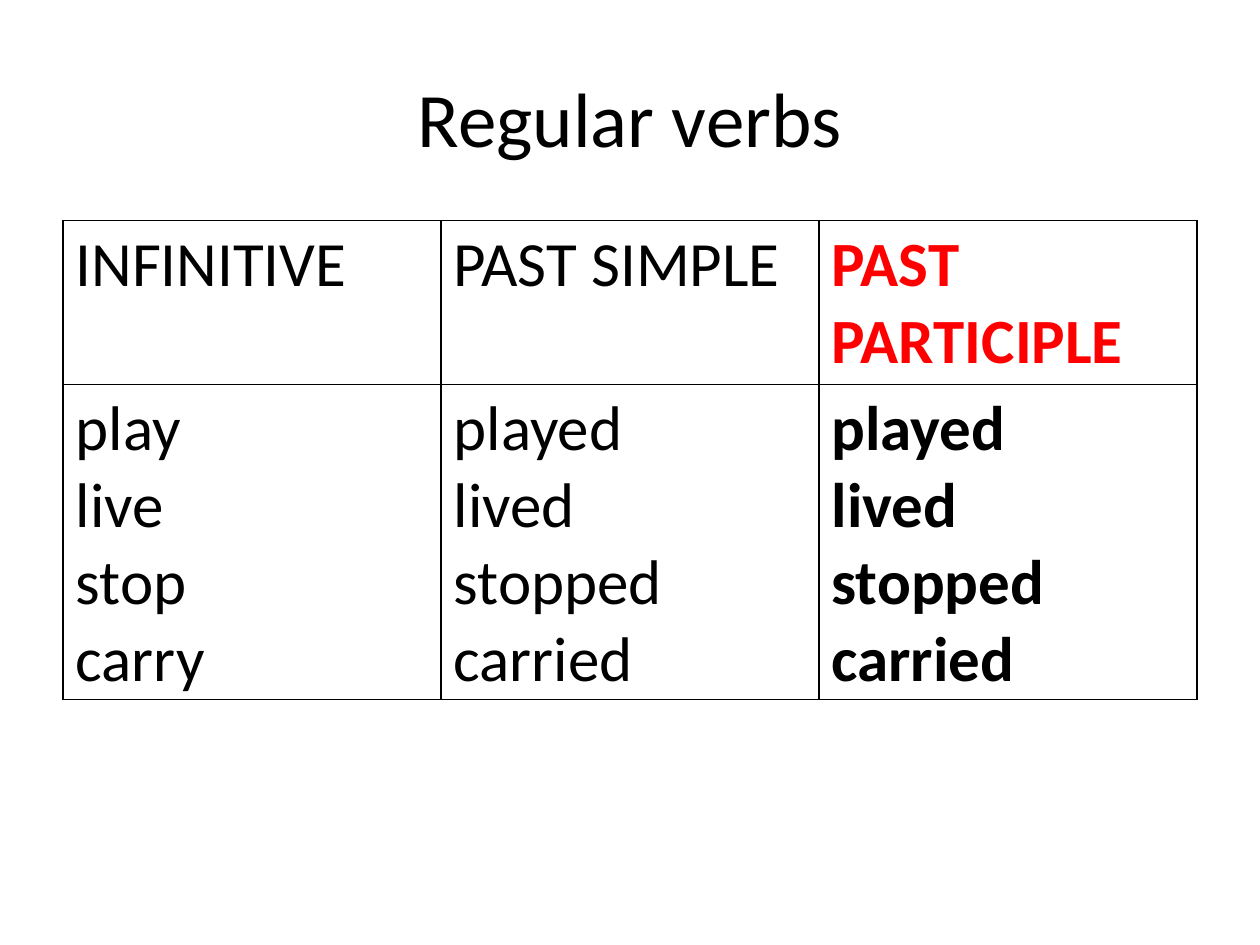
from lxml import etree
from pptx import Presentation
from pptx import util as u
from pptx.dml.color import RGBColor
from pptx.enum import text
from pptx.oxml import parse_xml
from pptx.oxml.ns import nsdecls

TITLE = "Regular verbs"
HEADS = ["INFINITIVE", "PAST SIMPLE", "PAST PARTICIPLE"]
VERBS = [
    ("play", "played", "played"),
    ("live", "lived", "lived"),
    ("stop", "stopped", "stopped"),
    ("carry", "carried", "carried"),
]
BLACK, RED = "000000", "FF0000"
LEFT, WIDTH = 0.5, 9
HIGH = [1.3, 2.5]


def write(frame, lines, size, color=BLACK, bold=False, align=text.PP_ALIGN.LEFT):
    """Fill a text frame with one paragraph for each line."""
    for i, line in enumerate(lines):
        para = frame.add_paragraph() if i else frame.paragraphs[0]
        para.alignment = align
        run = para.add_run()
        run.text = line
        font = run.font
        font.name, font.size, font.bold = "Calibri", u.Pt(size), bold
        font.color.rgb = RGBColor.from_string(color)


def edge(cell):
    """Draw a thin black border on all four sides of a cell."""
    props = cell._tc.get_or_add_tcPr()
    for i, side in enumerate(("lnL", "lnR", "lnT", "lnB")):
        props.insert(i, parse_xml(
            f'<a:{side} {nsdecls("a")} w="{u.Pt(1)}"><a:solidFill>'
            f'<a:srgbClr val="{BLACK}"/></a:solidFill></a:{side}>'))


def main():
    """Build the slide and save it."""
    deck = Presentation()
    deck.slide_width, deck.slide_height = u.Inches(10), u.Inches(7.5)
    slide = deck.slides.add_slide(deck.slide_layouts[6])

    box = slide.shapes.add_textbox(
        u.Inches(LEFT), u.Inches(0.3), u.Inches(WIDTH), u.Inches(1.25))
    frame = box.text_frame
    frame.word_wrap = True
    frame.vertical_anchor = text.MSO_ANCHOR.MIDDLE
    write(frame, [TITLE], 44, align=text.PP_ALIGN.CENTER)

    table = slide.shapes.add_table(
        len(HIGH), len(HEADS), u.Inches(LEFT), u.Inches(1.75),
        u.Inches(WIDTH), u.Inches(sum(HIGH))).table
    table.first_row = table.horz_banding = False
    for row, high in zip(table.rows, HIGH):
        row.height = u.Inches(high)
    for col, (head, forms) in enumerate(zip(HEADS, zip(*VERBS))):
        last = col == len(HEADS) - 1
        parts = [([head], RED if last else BLACK), (forms, BLACK)]
        for row, (lines, color) in enumerate(parts):
            cell = table.cell(row, col)
            cell.fill.background()
            edge(cell)
            write(cell.text_frame, lines, 36, color, last)

    deck.save("out.pptx")


if __name__ == "__main__":
    main()
